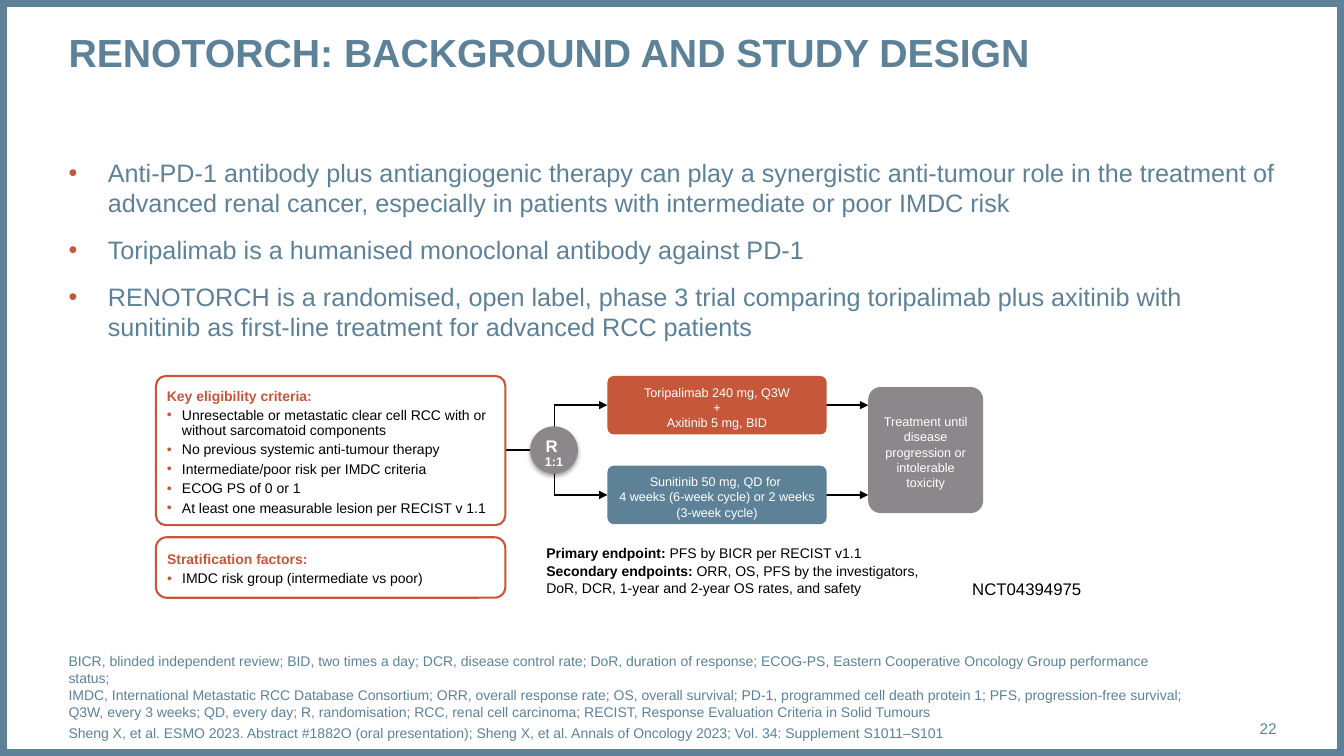
"""Build the RENOTORCH background and study design slide."""
from dataclasses import dataclass

from lxml.etree import SubElement
from pptx import Presentation
from pptx.dml.color import RGBColor as RGB
from pptx.enum.shapes import MSO_CONNECTOR as LINK, MSO_SHAPE as SHAPE
from pptx.enum.text import MSO_ANCHOR as ANCHOR, MSO_AUTO_SIZE as AUTO, PP_ALIGN as ALIGN
from pptx.oxml.ns import qn
from pptx.util import Inches, Pt


@dataclass(frozen=True)
class Theme:
    font: str = "Arial"
    slate: RGB = RGB.from_string("5D8298")
    rust: RGB = RGB.from_string("C6573B")
    grey: RGB = RGB.from_string("8B878B")
    black: RGB = RGB.from_string("000000")
    white: RGB = RGB.from_string("FFFFFF")
    title: int = 28
    body: int = 18
    label: int = 12
    number: int = 11
    detail: int = 10
    arm: int = 9


theme = Theme()
deck = Presentation()
deck.slide_width, deck.slide_height = Inches(13.33), Inches(7.5)
slide = deck.slides.add_slide(deck.slide_layouts[5])
shapes = slide.shapes


def share(*percents):
    """Turn alternating percentages of slide width and height into lengths."""
    sides = (deck.slide_width, deck.slide_height)
    return [round(sides[i % 2] * percent / 100) for i, percent in enumerate(percents)]


def write(holder, box, paragraphs, size, color, insets=(0, 0, 0, 0), anchor=ANCHOR.TOP):
    """Place a shape and fill it with (runs, layout, bullet indent) paragraphs."""
    for side, length in zip(("left", "top", "width", "height"), share(*box)):
        setattr(holder, side, length)
    frame = holder.text_frame
    margins = zip(("margin_left", "margin_top", "margin_right", "margin_bottom"), map(Inches, insets))
    settings = {"word_wrap": True, "auto_size": AUTO.NONE, "vertical_anchor": anchor, **dict(margins)}
    for key, value in settings.items():
        setattr(frame, key, value)
    for index, (runs, layout, indent) in enumerate(paragraphs):
        paragraph = frame.add_paragraph() if index else frame.paragraphs[0]
        for key, value in {"alignment": ALIGN.LEFT, **layout}.items():
            setattr(paragraph, key, value)
        if indent:
            props = paragraph._p.get_or_add_pPr()
            props.set("marL", str(Inches(indent)))
            props.set("indent", str(-Inches(indent)))
            SubElement(SubElement(props, qn("a:buClr")), qn("a:srgbClr"), val=str(theme.rust))
            SubElement(props, qn("a:buFont"), typeface=theme.font)
            SubElement(props, qn("a:buChar"), char="•")
        for text, changes in runs:
            look = {"name": theme.font, "size": size, "color": color, "bold": False, **changes}
            for part, line in enumerate(text.split("\n")):
                if part:
                    paragraph.add_line_break()
                run = paragraph.add_run()
                run.text = line
                run.font.color.rgb = look["color"]
                for key, value in {"name": look["name"], "size": Pt(look["size"]), "bold": look["bold"]}.items():
                    setattr(run.font, key, value)


bold = {"bold": True}
heading = {"bold": True, "color": theme.rust}

border = shapes.add_shape(SHAPE.RECTANGLE, *share(0, 0, 100, 100))
border.shadow.inherit = False
border.fill.background()
border.line.color.rgb, border.line.width = theme.slate, Pt(10)

write(shapes.title, (5.1, 3.73, 89.9, 12.53),
      [([("RENOTORCH: BACKGROUND AND STUDY DESIGN", bold)], {}, 0)], theme.title, theme.slate)

background = [
    "Anti-PD-1 antibody plus antiangiogenic therapy can play a synergistic anti-tumour role in the treatment of "
    "advanced renal cancer, especially in patients with intermediate or poor IMDC risk",
    "Toripalimab is a humanised monoclonal antibody against PD-1",
    "RENOTORCH is a randomised, open label, phase 3 trial comparing toripalimab plus axitinib with sunitinib as "
    "first-line treatment for advanced RCC patients",
]
write(shapes.add_textbox(0, 0, 0, 0), (5.1, 20.8, 89.9, 66),
      [([(point, {})], {"space_before": Pt(12)} if i else {}, 0.39) for i, point in enumerate(background)],
      theme.body, theme.slate)

abbreviations = (
    "BICR, blinded independent review; BID, two times a day; DCR, disease control rate; DoR, duration of response; "
    "ECOG-PS, Eastern Cooperative Oncology Group performance status; \n"
    "IMDC, International Metastatic RCC Database Consortium; ORR, overall response rate; OS, overall survival; "
    "PD‑1, programmed cell death protein 1; PFS, progression-free survival; Q3W, every 3 weeks; QD, every day; "
    "R, randomisation; RCC, renal cell carcinoma; RECIST, Response Evaluation Criteria in Solid Tumours"
)
citation = ("Sheng X, et al. ESMO 2023. Abstract #1882O (oral presentation); Sheng X, et al. Annals of Oncology 2023; "
            "Vol. 34: Supplement S1011–S101")
write(shapes.add_textbox(0, 0, 0, 0), (5.1, 92.67, 83.5, 5.33),
      [([(abbreviations, {})], {}, 0), ([(citation, {})], {"space_before": Pt(3)}, 0)],
      theme.detail, theme.slate, anchor=ANCHOR.BOTTOM)
write(shapes.add_textbox(0, 0, 0, 0), (88.6, 93.73, 6.4, 5.33),
      [([("22", {})], {"alignment": ALIGN.RIGHT}, 0)], theme.number, theme.slate, anchor=ANCHOR.MIDDLE)
write(shapes.add_textbox(0, 0, 0, 0), (71.6, 75.87, 15.2, 4),
      [([("NCT04394975", {})], {}, 0)], theme.label, theme.black, (0.1, 0.05, 0.1, 0.05))

arm_tops = [49.73 + 11.87 * row for row in range(2)]
arm_height = 7.73
upper, lower = [top + arm_height / 2 for top in arm_tops]
middle = (upper + lower) / 2
fork = 41.25
routes = [((37.05, middle, 40.6, middle), False), ((fork, lower, fork, upper), False)]
routes += [((start, y, end, y), True) for start, end in ((fork, 45.2), (60.7, 64.6)) for y in (upper, lower)]
for ends, arrow in routes:
    route = shapes.add_connector(LINK.STRAIGHT, *share(*ends))
    route.line.color.rgb, route.line.width = theme.black, Pt(1.25)
    if arrow:
        SubElement(route.line._get_or_add_ln(), qn("a:tailEnd"), type="triangle")
    SubElement(route._element.spPr, qn("a:effectLst"))

criteria = [
    ((11.6, 49.73, 26, 19.73), 0.066, "Key eligibility criteria:", [
        "Unresectable or metastatic clear cell RCC with or without sarcomatoid components",
        "No previous systemic anti-tumour therapy",
        "Intermediate/poor risk per IMDC criteria",
        "ECOG PS of 0 or 1",
        "At least one measurable lesion per RECIST v 1.1"]),
    ((11.6, 71.07, 26, 8), 0.178, "Stratification factors:", ["IMDC risk group (intermediate vs poor)"]),
]
tight = {"line_spacing": 0.9}
cards = []
for box, corner, name, items in criteria:
    paragraphs = [([(name, heading)], tight, 0)]
    paragraphs += [([(item, {})], {**tight, "space_before": Pt(3)}, 0.15) for item in items]
    paragraphs[-1][1]["space_after"] = Pt(3)
    cards.append((box, corner, theme.white, theme.rust, paragraphs, theme.detail, theme.black,
                  (0.08, 0.12, 0.08, 0.08)))

treatments = [
    ((45.2, arm_tops[0], 16.3, arm_height), theme.rust, "Toripalimab 240 mg, Q3W\n+\nAxitinib 5 mg, BID"),
    ((45.2, arm_tops[1], 16.3, arm_height), theme.slate,
     "Sunitinib 50 mg, QD for \n4 weeks (6-week cycle) or 2 weeks (3-week cycle)"),
    ((64.6, 51.2, 8.55, 16.67), theme.grey, "Treatment until disease progression or intolerable toxicity"),
]
for box, fill, text in treatments:
    centred = {"alignment": ALIGN.CENTER, "space_after": Pt(3)}
    cards.append((box, 0.107, fill, None, [([(text, {})], centred, 0)], theme.arm, theme.white,
                  (0.08, 0.08, 0.08, 0.04)))

for box, corner, fill, outline, paragraphs, size, color, insets in cards:
    card = shapes.add_shape(SHAPE.ROUNDED_RECTANGLE, *share(*box))
    card.adjustments[0] = corner
    card.shadow.inherit = False
    card.fill.solid()
    card.fill.fore_color.rgb = fill
    if outline is None:
        card.line.fill.background()
    else:
        card.line.color.rgb, card.line.width = outline, Pt(1.5)
    write(card, box, paragraphs, size, color, insets, ANCHOR.MIDDLE)

write(shapes.add_textbox(0, 0, 0, 0), (40.65, 72, 28.7, 10.8), [
    ([("Primary endpoint: ", bold), ("PFS by BICR per RECIST v1.1", {})], {}, 0),
    ([("Secondary endpoints: ", bold),
      ("ORR, OS, PFS by the investigators, DoR, DCR, 1-year and 2-year OS rates, and safety", {})],
     {"space_before": Pt(1), "space_after": Pt(1)}, 0),
], theme.detail, theme.black)

randomisation = shapes.add_shape(SHAPE.OVAL, *share(39.45, 56.4, 3.55, 6.27))
randomisation.shadow.inherit = False
randomisation.fill.solid()
randomisation.fill.fore_color.rgb = theme.grey
randomisation.line.fill.background()
glow = SubElement(randomisation._element.spPr.find(qn("a:effectLst")), qn("a:outerShdw"),
                  blurRad=str(Pt(3.1)), dist=str(Pt(1.8)), dir="5400000", rotWithShape="0")
SubElement(SubElement(glow, qn("a:srgbClr"), val=str(theme.black)), qn("a:alpha"), val="35000")
write(shapes.add_textbox(0, 0, 0, 0), (38.5, 57.87, 5.45, 4.27),
      [([("R \n", bold), ("1:1", {**bold, "size": theme.arm})], {**tight, "alignment": ALIGN.CENTER}, 0)],
      theme.label, theme.white)

deck.save("out.pptx")
